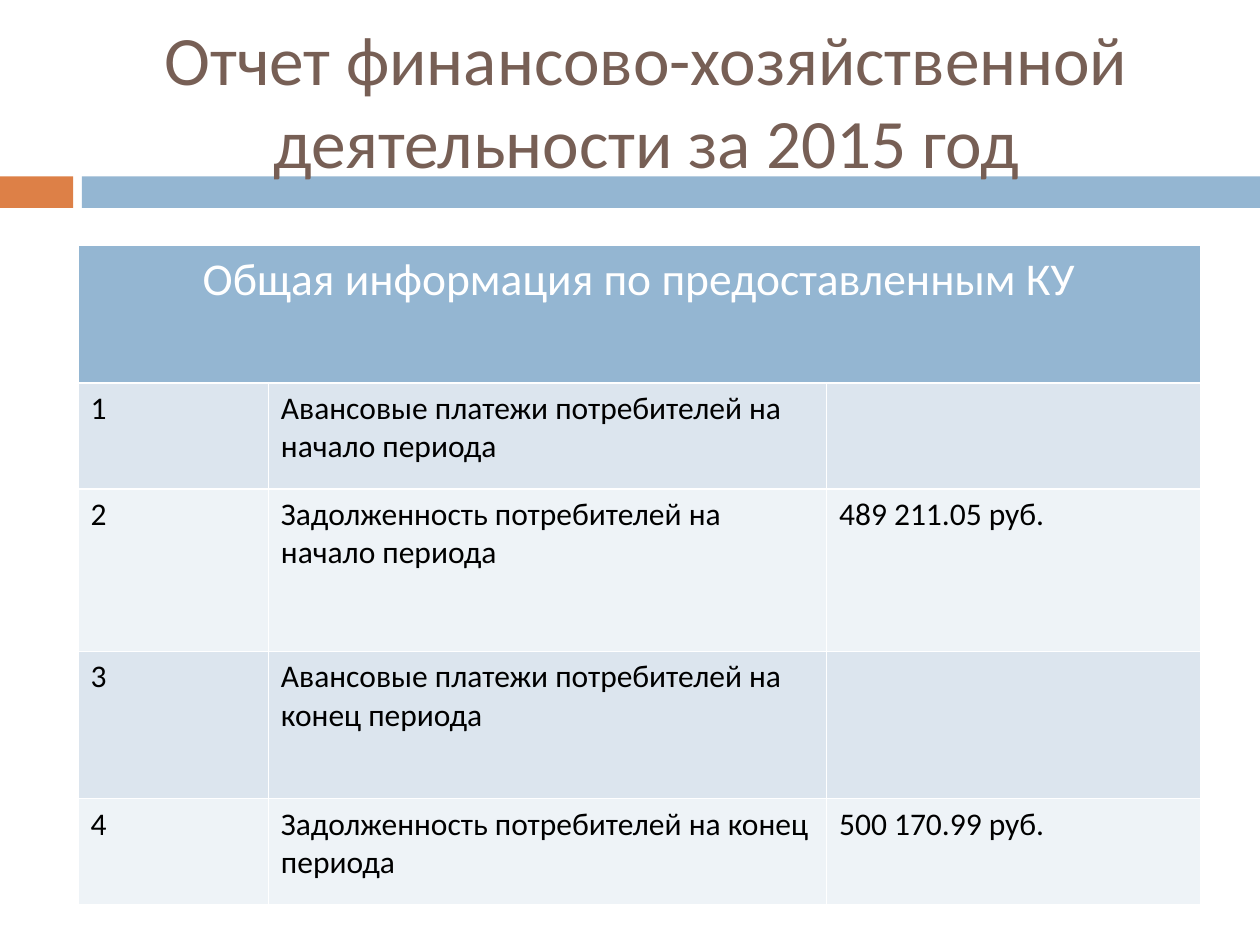
from lxml import etree
from pptx import Presentation, util as u
from pptx.dml.color import RGBColor
from pptx.enum import shapes, text
from pptx.oxml import ns

ORANGE = RGBColor(0xDD, 0x80, 0x47)
BLUE = RGBColor(0x94, 0xB6, 0xD2)
BROWN = RGBColor(0x77, 0x5F, 0x55)
WHITE = RGBColor(0xFF, 0xFF, 0xFF)
BLACK = RGBColor(0, 0, 0)
BANDS = [RGBColor(0xDC, 0xE5, 0xEE), RGBColor(0xEE, 0xF3, 0xF7)]
FONT = "Calibri"

TITLE = "Отчет финансово-хозяйственной деятельности за 2015 год"
HEADING = "Общая информация по предоставленным КУ"
ROWS = [
    ("Авансовые платежи потребителей на начало периода", ""),
    ("Задолженность потребителей на начало периода", "489 211.05 руб."),
    ("Авансовые платежи потребителей на конец периода", ""),
    ("Задолженность потребителей на конец периода", "500 170.99 руб."),
]
COLUMN_WIDTHS = [1.51, 4.43, 2.97]
ROW_HEIGHTS = [1.09, 0.84, 1.29, 1.17, 0.84]


def style_paragraph(p, size, color, align=text.PP_ALIGN.LEFT):
    p.alignment = align
    p.font.name = FONT
    p.font.size = u.Pt(size)
    p.font.color.rgb = color


def add_bar(s, left, width, color):
    bar = s.shapes.add_shape(shapes.MSO_SHAPE.RECTANGLE, u.Inches(left), u.Inches(1.4),
                             u.Inches(width), u.Inches(0.25))
    bar.shadow.inherit = False
    bar.fill.solid()
    bar.fill.fore_color.rgb = color
    bar.line.fill.background()


def set_title(s):
    title = s.shapes.title
    title.left, title.top = u.Inches(0.67), u.Inches(0.25)
    title.width, title.height = u.Inches(8.92), u.Inches(1.08)
    tf = title.text_frame
    tf.text = TITLE
    tf.word_wrap = True
    tf.auto_size = text.MSO_AUTO_SIZE.NONE
    tf.vertical_anchor = text.MSO_ANCHOR.MIDDLE
    style_paragraph(tf.paragraphs[0], 39.6, BROWN, text.PP_ALIGN.CENTER)
    s.shapes._spTree.append(title._element)


def set_borders(cell):
    tcPr = cell._tc.get_or_add_tcPr()
    for side in "LRTB":
        ln = etree.SubElement(tcPr, ns.qn(f"a:ln{side}"), w=str(u.Pt(1)))
        fill = etree.SubElement(ln, ns.qn("a:solidFill"))
        etree.SubElement(fill, ns.qn("a:srgbClr"), val=str(WHITE))


def fill_cell(cell, value, fill, size=18, color=BLACK, align=text.PP_ALIGN.LEFT):
    set_borders(cell)
    cell.fill.solid()
    cell.fill.fore_color.rgb = fill
    cell.text = value
    style_paragraph(cell.text_frame.paragraphs[0], size, color, align)


def add_report_table(s):
    frame = s.shapes.add_table(len(ROW_HEIGHTS), len(COLUMN_WIDTHS), u.Inches(0.62), u.Inches(1.95),
                               u.Inches(sum(COLUMN_WIDTHS)), u.Inches(sum(ROW_HEIGHTS)))
    table = frame.table
    table.first_row = table.horz_banding = False
    for column, width in zip(table.columns, COLUMN_WIDTHS):
        column.width = u.Inches(width)
    for row, height in zip(table.rows, ROW_HEIGHTS):
        row.height = u.Inches(height)
    table.cell(0, 0).merge(table.cell(0, len(COLUMN_WIDTHS) - 1))
    fill_cell(table.cell(0, 0), HEADING, BLUE, 26, WHITE, text.PP_ALIGN.CENTER)
    for i, row in enumerate(ROWS, start=1):
        for j, value in enumerate((str(i), *row)):
            fill_cell(table.cell(i, j), value, BANDS[(i - 1) % 2])


def main():
    prs = Presentation()
    prs.slide_width, prs.slide_height = u.Inches(10), u.Inches(7.5)
    s = prs.slides.add_slide(prs.slide_layouts[5])
    add_bar(s, 0, 0.58, ORANGE)
    add_bar(s, 0.65, 9.35, BLUE)
    set_title(s)
    add_report_table(s)
    prs.save("out.pptx")


if __name__ == "__main__":
    main()
